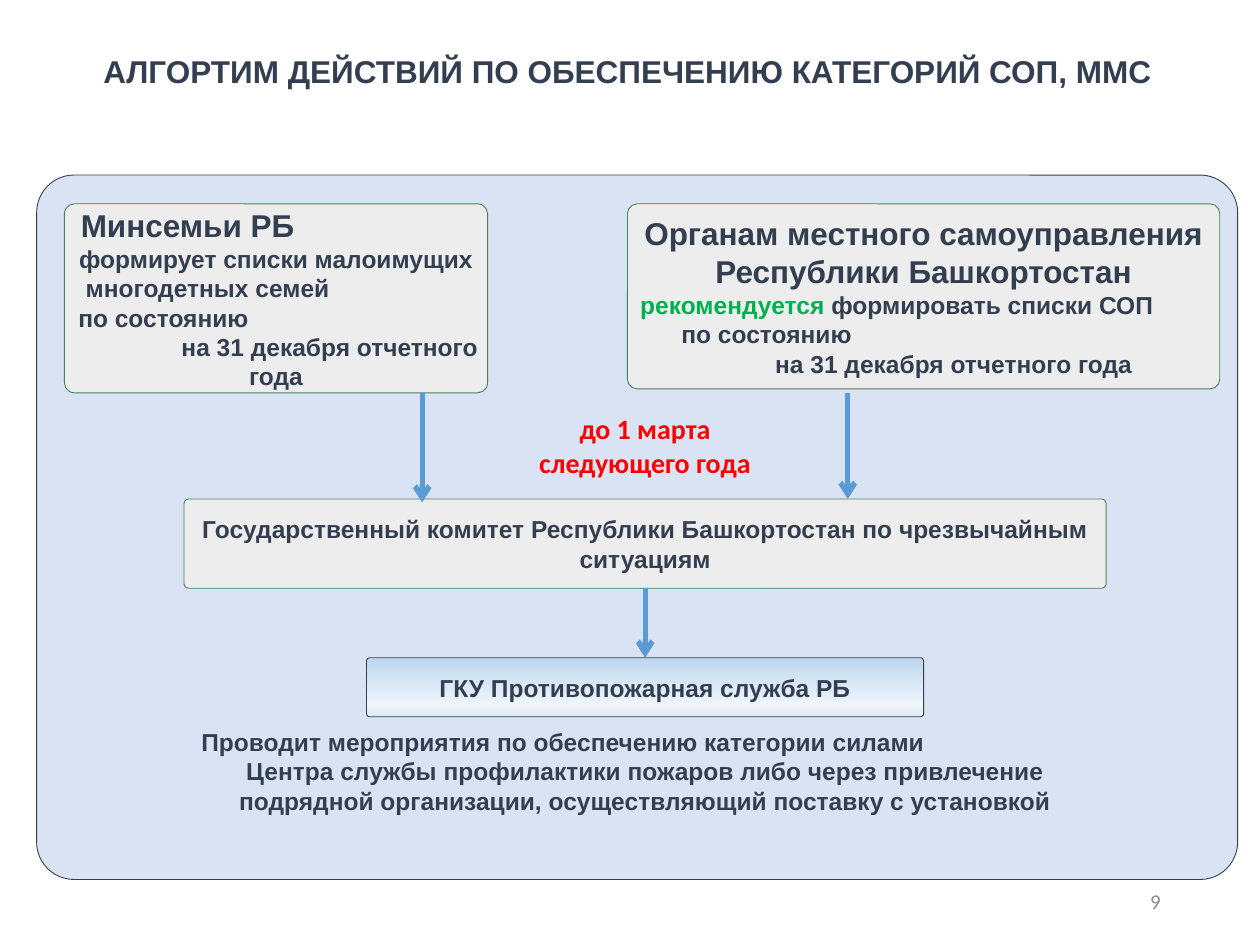
import copy
import dataclasses

import pptx
import pptx.dml.color
import pptx.enum.shapes
import pptx.enum.text
import pptx.oxml.ns
import pptx.oxml.xmlchemy
import pptx.util

Cm = pptx.util.Cm
Pt = pptx.util.Pt
RGB = pptx.dml.color.RGBColor.from_string
Align = pptx.enum.text.PP_ALIGN
Anchor = pptx.enum.text.MSO_ANCHOR
qn = pptx.oxml.ns.qn


@dataclasses.dataclass(frozen=True)
class Theme:
    ink: str = "333F50"
    panel: str = "DAE3F3"
    box: str = "EDEDED"
    box_line: str = "48825A"
    arrow: str = "5B9BD5"
    advice: str = "00B050"
    deadline: str = "FF0000"
    number: str = "8C8C8C"
    gradient: tuple = (("BDD7EE", 0), ("EFF5FB", 0.8), ("DEEBF7", 1))
    heading_size: int = 18
    deadline_size: int = 16
    body_size: int = 14
    number_size: int = 12


theme = Theme()


def write(frame, text, size=theme.body_size, color=theme.ink, font="Arial",
          bold=True, align=Align.CENTER, indent=0, join=False):
    """Add a paragraph, or with join a run in the last paragraph."""
    paragraph = frame.paragraphs[-1]
    if paragraph.runs and not join:
        paragraph = frame.add_paragraph()
    if not join:
        paragraph.alignment = align
        if indent:
            properties = paragraph._p.get_or_add_pPr()
            properties.set("marL", str(Cm(indent)))
            properties.set("indent", "0")
    run = paragraph.add_run()
    run.text = text
    run.font.name = font
    run.font.size = Pt(size)
    run.font.bold = bold
    run.font.color.rgb = RGB(color)


def add_box(left, top, width, height, fill, line):
    """Add a rounded box ready for centred text."""
    box = slide.shapes.add_shape(
        pptx.enum.shapes.MSO_SHAPE.ROUNDED_RECTANGLE,
        Cm(left), Cm(top), Cm(width), Cm(height))
    box.adjustments[0] = 0.053
    box.shadow.inherit = False
    box.fill.solid()
    box.fill.fore_color.rgb = RGB(fill)
    box.line.color.rgb = RGB(line)
    box.line.width = Pt(0.5)
    frame = box.text_frame
    frame.word_wrap = True
    frame.vertical_anchor = Anchor.MIDDLE
    frame.margin_left = frame.margin_right = Cm(0.1)
    frame.margin_top = frame.margin_bottom = Cm(0.2)
    return box


presentation = pptx.Presentation()
presentation.slide_width = Cm(25.4)
presentation.slide_height = Cm(19.05)
slide = presentation.slides.add_slide(presentation.slide_layouts[5])

# Title
title = slide.shapes.title
title.left, title.top, title.width, title.height = Cm(-0.05), Cm(0.91), Cm(25.4), Cm(1.02)
title.text_frame.word_wrap = True
title.text_frame.vertical_anchor = Anchor.MIDDLE
write(title.text_frame, "АЛГОРТИМ ДЕЙСТВИЙ ПО ОБЕСПЕЧЕНИЮ КАТЕГОРИЙ СОП, ММС",
      size=theme.heading_size)

# Background panel
add_box(0.74, 3.53, 24.21, 14.2, theme.panel, theme.ink)

# Fire service with its gradient
fire_service = add_box(7.39, 13.26, 11.23, 1.19, theme.panel, theme.ink)
fire_service.fill.gradient()
fire_service.fill.gradient_angle = 270
stop_list = fire_service._element.spPr.find(".//" + qn("a:gsLst"))
stop_list.insert(1, copy.deepcopy(stop_list[0]))
for stop, (color, position) in zip(fire_service.fill.gradient_stops, theme.gradient):
    stop.color.rgb = RGB(color)
    stop.position = position
write(fire_service.text_frame, "ГКУ Противопожарная служба РБ")

# Ministry
ministry = add_box(1.3, 4.11, 8.53, 3.81, theme.box, theme.box_line).text_frame
write(ministry, "Минсемьи РБ", size=theme.heading_size, align=Align.LEFT, indent=0.17)
write(ministry, "формирует списки малоимущих")
write(ministry, "многодетных семей", align=Align.LEFT, indent=0.27)
write(ministry, "по состоянию", align=Align.LEFT, indent=0.12)
write(ministry, "на 31 декабря отчетного", align=Align.LEFT, indent=2.2)
write(ministry, "года")

# Local authorities
authorities = add_box(12.65, 4.11, 11.94, 3.73, theme.box, theme.box_line).text_frame
write(authorities, "Органам местного самоуправления Республики Башкортостан",
      size=theme.heading_size)
write(authorities, "рекомендуется ", color=theme.advice, align=Align.LEFT, indent=0.1)
write(authorities, "формировать списки СОП", join=True)
write(authorities, "по состоянию", align=Align.LEFT, indent=0.93)
write(authorities, "на 31 декабря отчетного года", align=Align.LEFT, indent=2.82)

# State committee
committee = add_box(3.71, 10.06, 18.59, 1.8, theme.box, theme.box_line)
write(committee.text_frame,
      "Государственный комитет Республики Башкортостан по чрезвычайным ситуациям")

# Arrows: ministry and authorities to committee, committee to fire service
for x, top, bottom in ((8.51, 7.92, 10.13), (17.09, 7.92, 10.06), (13, 11.86, 13.26)):
    arrow = slide.shapes.add_connector(
        pptx.enum.shapes.MSO_CONNECTOR.STRAIGHT, Cm(x), Cm(top), Cm(x), Cm(bottom))
    arrow.line.color.rgb = RGB(theme.arrow)
    arrow.line.width = Pt(3)
    head = pptx.oxml.xmlchemy.OxmlElement("a:tailEnd")
    head.set("type", "arrow")
    arrow.line._get_or_add_ln().append(head)
    arrow._element.spPr.append(pptx.oxml.xmlchemy.OxmlElement("a:effectLst"))
arrow.begin_connect(committee, 2)
arrow.end_connect(fire_service, 0)

# Free text: deadline, measures, slide number
deadline, measures, number = [
    slide.shapes.add_textbox(Cm(left), Cm(top), Cm(width), Cm(height)).text_frame
    for left, top, width, height in (
        (9.83, 8.18, 6.35, 1.63), (3.71, 14.53, 18.59, 2.06), (17.93, 17.65, 5.72, 1.02))]
for frame in (deadline, measures, number):
    frame.word_wrap = True
number.vertical_anchor = Anchor.MIDDLE

for line in ("до 1 марта", "следующего года"):
    write(deadline, line, size=theme.deadline_size, color=theme.deadline, font="Calibri")
write(measures, "Проводит мероприятия по обеспечению категории силами",
      align=Align.LEFT, indent=0.1)
write(measures, "Центра службы профилактики пожаров либо через привлечение "
      "подрядной организации, осуществляющий поставку с установкой")
write(number, "9", size=theme.number_size, color=theme.number, font="Calibri",
      bold=False, align=Align.RIGHT)

presentation.save("out.pptx")
